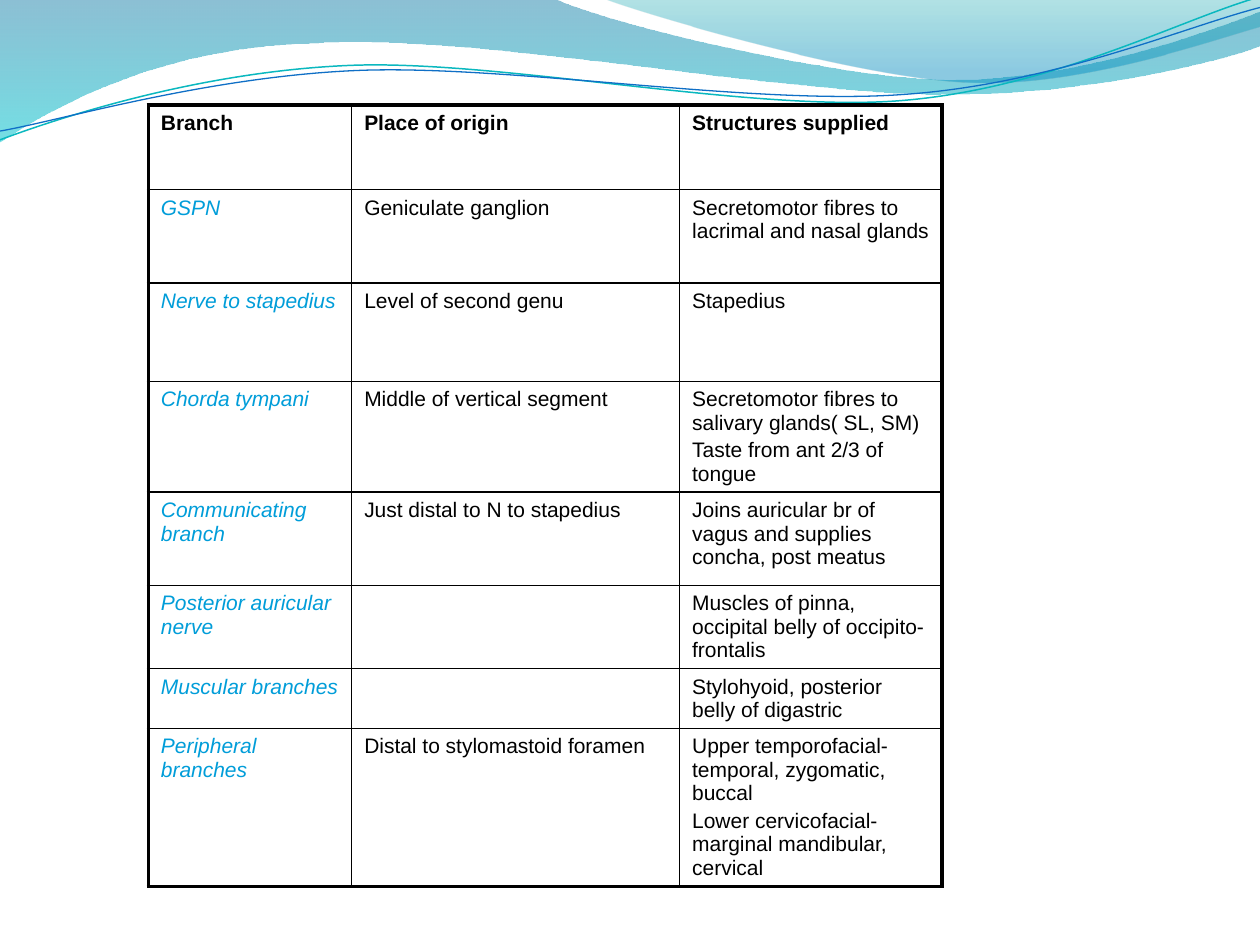
from math import cos, radians, sin

from lxml.etree import SubElement
from pptx import Presentation
from pptx.dml.color import RGBColor
from pptx.oxml.ns import qn
from pptx.util import Pt

BLACK = RGBColor(0x00, 0x00, 0x00)
BRANCH_BLUE = RGBColor(0x00, 0x9D, 0xD9)
DEEP_BLUE = RGBColor(0x00, 0x74, 0xA1)
CYAN = RGBColor(0x00, 0xC6, 0xCF)
TEAL = RGBColor(0x00, 0xA1, 0xA9)
SKY = RGBColor(0x00, 0x8B, 0xBF)
LINE_TEAL = RGBColor(0x0A, 0xB8, 0xBF)
LINE_BLUE = RGBColor(0x0F, 0x6F, 0xC6)

ROWS = [
    ("Branch", "Place of origin", "Structures supplied"),
    ("GSPN", "Geniculate ganglion", "Secretomotor fibres to lacrimal and nasal glands"),
    ("Nerve to stapedius", "Level of second genu", "Stapedius"),
    ("Chorda tympani", "Middle of vertical segment",
     "Secretomotor fibres to salivary glands( SL, SM)\nTaste from ant 2/3 of tongue"),
    ("Communicating branch", "Just distal to N to stapedius",
     "Joins auricular br of vagus and supplies concha, post meatus"),
    ("Posterior auricular nerve", "",
     "Muscles of pinna, occipital belly of occipito-frontalis"),
    ("Muscular branches", "", "Stylohyoid, posterior belly of digastric"),
    ("Peripheral branches", "Distal to stylomastoid foramen",
     "Upper temporofacial- temporal, zygomatic, buccal\n"
     "Lower cervicofacial- marginal mandibular, cervical"),
]
COLUMN_WIDTHS = [116.2, 187.4, 150]
ROW_HEIGHTS = [48.4, 53.3, 56.2, 53.3, 53.3, 35.3, 28.1, 53.3]
TABLE_LEFT, TABLE_TOP = 84.75, 60
THICK, THIN = 2.25, 1

WAVES = [
    ((0, 0), [
        [(316.8, -0.7)],
        [(342.7, 12.2), (478.1, 45.4), (545.8, 45.4)],
        [(614.2, 45.4), (689.8, 18.7), (720, 6.5)],
        [(720.7, 25.9)],
        [(707.8, 31.7), (626.4, 54.7), (537.1, 54)],
        [(447.8, 54), (275, 20.2), (185, 24.5)],
        [(92.9, 25.9), (33.1, 59.8), (-0.7, 81.4)],
        [(0, 0)],
    ], [(0, DEEP_BLUE, 45), (1, CYAN, 55)]),
    ((344.9, -0.7), [
        [(366.5, 7.9), (491, 44.6), (553.7, 46.8)],
        [(616.3, 49.7), (691.9, 23), (720, 15.1)],
        [(720, 0)],
        [(344.9, -0.7)],
    ], [(0, TEAL, 30), (0.8, SKY, 45)]),
]
RIPPLES = [
    ((0, 79.9), [
        [(34.6, 67), (113.8, 41), (199.4, 37.4)],
        [(284.4, 33.8), (427, 64.1), (513.4, 57.6)],
        [(599.8, 51.1), (675.4, 10.8), (718.6, -1.4)],
    ], (359.3, 41.4), LINE_TEAL, 0.85),
    ((0, 74.9), [
        [(33.8, 69.1), (118.1, 43.9), (203.8, 40.3)],
        [(290.2, 36.7), (429.8, 60.5), (516.2, 54)],
        [(601.9, 48.2), (677.5, 15.1), (720, 4.3)],
    ], (359.6, 42.5), LINE_BLUE, 0.75),
]
RIPPLE_TILT = 2.7


def turn(point, center, degrees):
    angle = radians(degrees)
    x, y = point[0] - center[0], point[1] - center[1]
    return (center[0] + x * cos(angle) - y * sin(angle),
            center[1] + x * sin(angle) + y * cos(angle))


def add_outline(slide, start, segments, close):
    builder = slide.shapes.build_freeform(Pt(start[0]), Pt(start[1]))
    corners = [(Pt(x), Pt(y)) for segment in segments for x, y in segment]
    builder.add_line_segments(corners, close=close)
    shape = builder.convert_to_shape()
    shape.shadow.inherit = False
    sides = iter(list(shape._element.spPr.iter(qn("a:lnTo"))))
    for segment in segments:
        parts = [next(sides) for _ in segment]
        if len(parts) == 3:
            parts[0].tag = qn("a:cubicBezTo")
            for part in parts[1:]:
                parts[0].append(part[0])
                part.getparent().remove(part)
    return shape


def add_wave(slide, start, segments, stops):
    shape = add_outline(slide, start, segments, True)
    shape.line.fill.background()
    shape.fill.gradient()
    shape.fill.gradient_angle = 270
    for stop, (position, color, _) in zip(shape.fill.gradient_stops, stops):
        stop.position = position
        stop.color.rgb = color
    for element, (_, _, opacity) in zip(shape._element.spPr.iter(qn("a:srgbClr")), stops):
        SubElement(element, qn("a:alpha"), val=str(opacity * 1000))


def add_ripple(slide, start, segments, center, color, width):
    level_start = turn(start, center, RIPPLE_TILT)
    level_segments = [[turn(point, center, RIPPLE_TILT) for point in segment]
                      for segment in segments]
    shape = add_outline(slide, level_start, level_segments, False)
    shape.rotation = 360 - RIPPLE_TILT
    shape.fill.background()
    shape.line.color.rgb = color
    shape.line.width = Pt(width)


def set_borders(cell, widths):
    properties = cell._tc.get_or_add_tcPr()
    for side, width in widths.items():
        line = SubElement(properties, qn(f"a:ln{side}"), w=str(Pt(width)))
        fill = SubElement(line, qn("a:solidFill"))
        SubElement(fill, qn("a:srgbClr"), val=str(BLACK))


def add_branch_table(slide):
    table = slide.shapes.add_table(
        len(ROWS), len(COLUMN_WIDTHS), Pt(TABLE_LEFT), Pt(TABLE_TOP),
        Pt(sum(COLUMN_WIDTHS)), Pt(sum(ROW_HEIGHTS))).table
    table.first_row = table.horz_banding = False
    for column, width in zip(table.columns, COLUMN_WIDTHS):
        column.width = Pt(width)
    for row, height in zip(table.rows, ROW_HEIGHTS):
        row.height = Pt(height)
    last_row, last_column = len(ROWS) - 1, len(COLUMN_WIDTHS) - 1
    for row_index, texts in enumerate(ROWS):
        for column_index, text in enumerate(texts):
            cell = table.cell(row_index, column_index)
            set_borders(cell, {
                "L": THICK if column_index == 0 else THIN,
                "R": THICK if column_index == last_column else THIN,
                "T": THICK if row_index == 0 else THIN,
                "B": THICK if row_index == last_row else THIN,
            })
            cell.fill.background()
            cell.text_frame.text = text
            is_header = row_index == 0
            is_branch = column_index == 0 and not is_header
            for paragraph in cell.text_frame.paragraphs:
                paragraph.space_before = Pt(2.4)
                for run in paragraph.runs:
                    run.font.name = "Arial"
                    run.font.size = Pt(12)
                    run.font.bold = is_header
                    run.font.italic = is_branch
                    run.font.color.rgb = BRANCH_BLUE if is_branch else BLACK


def main():
    presentation = Presentation()
    presentation.slide_width, presentation.slide_height = Pt(720), Pt(540)
    slide = presentation.slides.add_slide(presentation.slide_layouts[6])
    for wave in WAVES:
        add_wave(slide, *wave)
    for ripple in RIPPLES:
        add_ripple(slide, *ripple)
    add_branch_table(slide)
    presentation.save("out.pptx")


if __name__ == "__main__":
    main()
